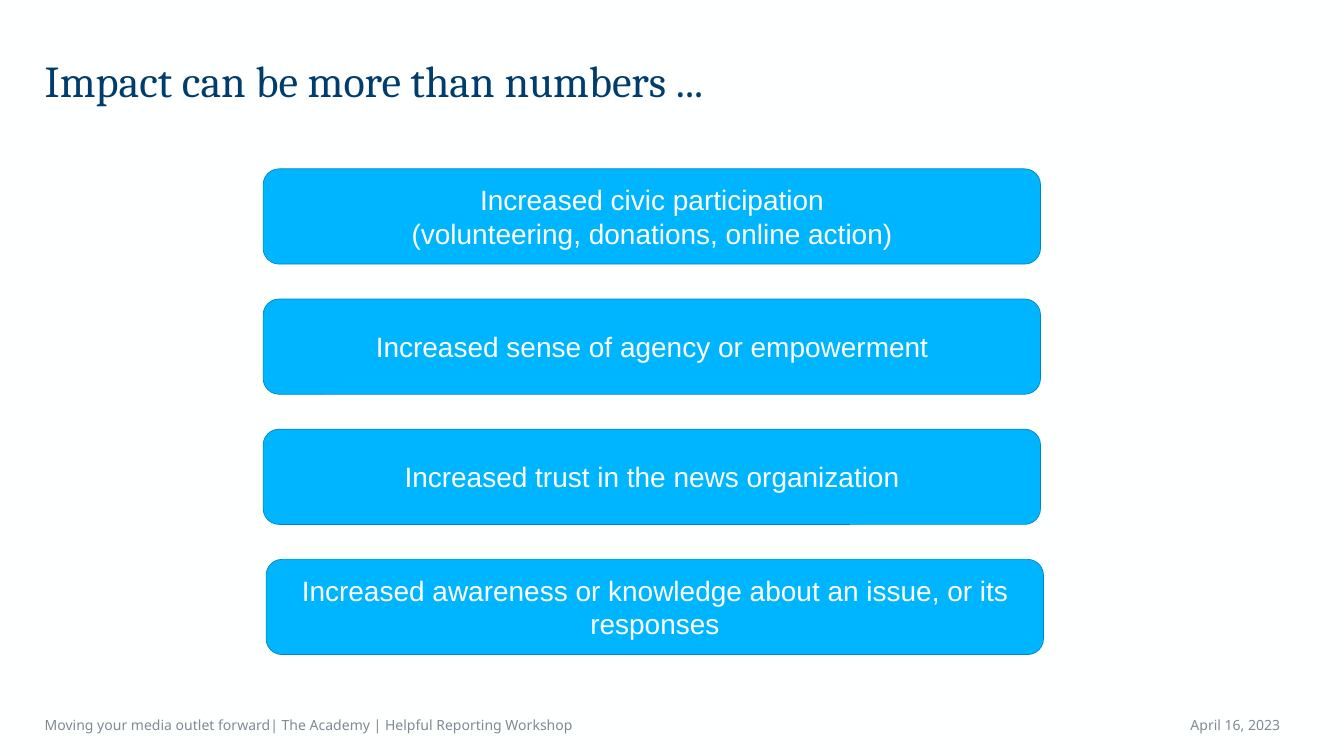
from pptx import Presentation
from pptx.dml.color import RGBColor
from pptx.enum.shapes import MSO_SHAPE
from pptx.enum.text import MSO_ANCHOR, PP_ALIGN
from pptx.util import Cm, Pt

WHITE = "FEFFFF"
NAVY = "003D6D"
GREY = "808A93"
SKY = "00B5FF"
EDGE = "0086BD"

MARGIN = 2
TOP, PITCH = 8.51, 6.56
LEFT, LAST = 13.26, 13.41

IMPACTS = [
    "Increased civic participation\n(volunteering, donations, online action)",
    "Increased sense of agency or empowerment",
    "Increased trust in the news organization",
    "Increased awareness or knowledge about an issue, or its responses",
]


def color(code):
    return RGBColor.from_string(code)


def write(shape, text, font, size, ink, align, anchor=MSO_ANCHOR.MIDDLE):
    frame = shape.text_frame
    frame.word_wrap = True
    frame.vertical_anchor = anchor
    frame.text = text
    for line in frame.paragraphs:
        line.alignment = align
        for run in line.runs:
            run.font.name = font
            run.font.size = Pt(size)
            run.font.color.rgb = color(ink)


def add_box(slide, left, top, width, height):
    return slide.shapes.add_textbox(Cm(left), Cm(top), Cm(width), Cm(height))


def add_title(slide, text):
    box = add_box(slide, MARGIN, 2, 62.76, 3.25)
    write(box, text, "Cambria", 63, NAVY, PP_ALIGN.LEFT, MSO_ANCHOR.TOP)
    box.text_frame.paragraphs[0].line_spacing = Pt(91)


def add_footer(slide, text, left, width, align):
    box = add_box(slide, left, 35.74, width, 1.6)
    write(box, text, "Noto Sans", 20, GREY, align)


def add_card(slide, text, left, top):
    card = slide.shapes.add_shape(
        MSO_SHAPE.ROUNDED_RECTANGLE, Cm(left), Cm(top), Cm(39.17), Cm(4.8))
    card.shadow.inherit = False
    card.fill.solid()
    card.fill.fore_color.rgb = color(SKY)
    card.line.color.rgb = color(EDGE)
    card.line.width = Pt(1)
    write(card, text, "Arial", 40, WHITE, PP_ALIGN.CENTER)


def main():
    deck = Presentation()
    deck.slide_width, deck.slide_height = Cm(67.72), Cm(38.1)
    slide = deck.slides.add_slide(deck.slide_layouts[6])
    slide.background.fill.solid()
    slide.background.fill.fore_color.rgb = color(WHITE)

    add_title(slide, "Impact can be more than numbers ...")
    add_footer(
        slide,
        "Moving your media outlet forward| The Academy | Helpful Reporting Workshop",
        MARGIN, 39.62, PP_ALIGN.LEFT)
    add_footer(slide, "April 16, 2023", 52.76, 12, PP_ALIGN.RIGHT)

    for row, text in enumerate(IMPACTS):
        left = LAST if text == IMPACTS[-1] else LEFT
        add_card(slide, text, left, TOP + row * PITCH)

    deck.save("out.pptx")


if __name__ == "__main__":
    main()
